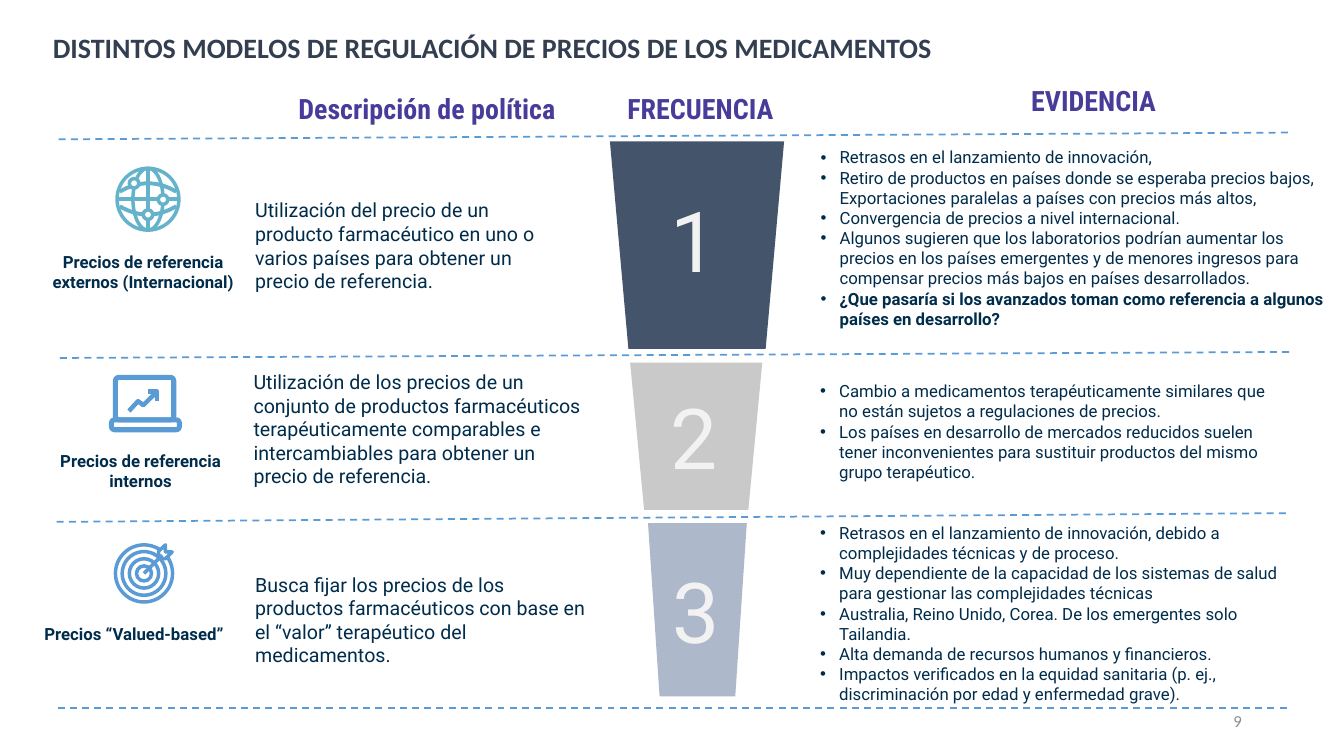
"""Build a slide comparing three models of medicine price regulation."""
from pptx import Presentation
from pptx.dml.color import RGBColor
from pptx.enum.dml import MSO_LINE
from pptx.enum.shapes import MSO_CONNECTOR as Link, MSO_SHAPE as Kind
from pptx.enum.text import MSO_ANCHOR as Anchor, MSO_AUTO_SIZE as Fit, PP_ALIGN as Align
from pptx.oxml.ns import qn
from pptx.util import Cm, Pt
from lxml.etree import SubElement

NAVY = RGBColor(0x00, 0x2C, 0x4B)
SLATE = RGBColor(0x33, 0x3F, 0x50)
PURPLE = RGBColor(0x48, 0x3C, 0x9A)
BLUE = RGBColor(0x5B, 0x9B, 0xD5)
TEAL = RGBColor(0x65, 0xB3, 0xCB)
DARK = RGBColor(0x44, 0x54, 0x6A)
SILVER = RGBColor(0xC9, 0xC9, 0xC9)
MIST = RGBColor(0xAD, 0xB9, 0xCA)
GREY = RGBColor(0x8C, 0x8C, 0x8C)
PALE = RGBColor(0xF2, 0xF2, 0xF2)
WHITE = RGBColor(0xFF, 0xFF, 0xFF)

deck = Presentation()
deck.slide_width, deck.slide_height = Cm(33.87), Cm(19.05)
slide = deck.slides.add_slide(deck.slide_layouts[5])
shapes = slide.shapes


def write(text, at, box=None, size=14, font="Roboto", color=NAVY, bold=False,
          align=Align.LEFT, anchor=Anchor.TOP, inset=0.25, bullet=False, strong=None):
    spot = [Cm(n) for n in at]
    if box is None:
        box = shapes.add_textbox(*spot)
    box.left, box.top, box.width, box.height = spot
    frame = box.text_frame
    frame.text = text
    frame.word_wrap, frame.auto_size = True, Fit.NONE
    frame.vertical_anchor = anchor
    frame.margin_left, frame.margin_right = Cm(inset), Cm(0.25)
    frame.margin_top = frame.margin_bottom = Cm(0.13)
    for index, para in enumerate(frame.paragraphs):
        para.alignment = align
        face = para.runs[0].font
        face.name, face.size = font, Pt(size)
        face.bold = bold or index == strong
        face.color.rgb = color
        if bullet:
            props = para._p.get_or_add_pPr()
            props.set("marL", str(Cm(0.48)))
            props.set("indent", str(-Cm(0.48)))
            SubElement(props, qn("a:buFont")).set("typeface", "Arial")
            SubElement(props, qn("a:buChar")).set("char", "•")


def paint(shape, fill=None, line=None, width=2.5):
    shape.shadow.inherit = False
    if fill is None:
        shape.fill.background()
    else:
        shape.fill.solid()
        shape.fill.fore_color.rgb = fill
    if line is None:
        shape.line.fill.background()
    else:
        shape.line.color.rgb = line
        shape.line.width = Pt(width)


write("DISTINTOS MODELOS DE REGULACIÓN DE PRECIOS DE LOS MEDICAMENTOS",
      (1.08, 0.64, 30.02, 1.12), box=shapes.title, size=20, font="Calibri",
      color=SLATE, bold=True)
write("9", (23.93, 17.65, 7.62, 1.02), size=12, font="Calibri", color=GREY,
      align=Align.RIGHT, anchor=Anchor.MIDDLE)

heads = [
    ("Descripción de política", 6.86, 2.18, Align.CENTER),
    ("FRECUENCIA", 15.56, 2.18, Align.LEFT),
    ("EVIDENCIA", 23.66, 1.98, Align.CENTER),
]
for text, x, y, align in heads:
    write(text, (x, y, 7.8, 1.12), size=20, font="Roboto Condensed",
          color=PURPLE, bold=True, align=align)

rules = [
    (1.48, 3.51, 32.49, 3.34),
    (1.51, 9.02, 32.5, 8.87),
    (1.43, 13.15, 32.44, 12.93),
    (1.45, 17.84, 32.46, 17.84),
]
for ends in rules:
    rule = shapes.add_connector(Link.STRAIGHT, *[Cm(n) for n in ends])
    rule.line.color.rgb = BLUE
    rule.line.width = Pt(1.25)
    rule.line.dash_style = MSO_LINE.DASH
    SubElement(rule._element.spPr, qn("a:effectLst"))

labels = [
    ("Precios de referencia externos (Internacional)", (0.98, 6.22, 5.26, 1.8)),
    ("Precios de referencia internos", (0.99, 11.23, 5.11, 1.27)),
    ("Precios “Valued-based”", (0.51, 15.6, 5.74, 0.76)),
]
for text, at in labels:
    write(text, at, size=12, bold=True, align=Align.CENTER)

policies = [
    ("Utilización del precio de un producto farmacéutico en uno o varios países "
     "para obtener un precio de referencia.", (6.18, 4.87, 8.1, 2.64)),
    ("Utilización de los precios de un conjunto de productos farmacéuticos "
     "terapéuticamente comparables e intercambiables para obtener un precio de "
     "referencia.", (6.14, 9.2, 8.86, 3.25)),
    ("Busca fijar los precios de los productos farmacéuticos con base en el "
     "“valor” terapéutico del medicamentos.", (6.18, 14.3, 8.92, 2.64)),
]
for text, at in policies:
    write(text, at)

steps = [
    (DARK, 0.106, (15.37, 3.56, 4.39, 5.23), (16.69, 4.2, 1.57, 3.63)),
    (SILVER, 0.106, (15.88, 9.14, 3.33, 3.71), (16.7, 9.7, 1.4, 2.59)),
    (MIST, 0.117, (16.33, 13.18, 2.49, 4.37), (16.76, 13.87, 1.12, 3.02)),
]
for rank, (color, slant, at, spot) in enumerate(steps, 1):
    step = shapes.add_shape(Kind.TRAPEZOID, *[Cm(n) for n in at])
    step.adjustments[0] = slant
    step.rotation = 180
    paint(step, color)
    plate = shapes.add_shape(Kind.RECTANGLE, *[Cm(n) for n in spot])
    paint(plate, color)
    write(str(rank), spot, box=plate, size=60, color=PALE, anchor=Anchor.MIDDLE,
          inset=0.2)

proofs = [
    ((20.43, 3.58, 13.61, 4.88), 4, [
        "Retrasos en el lanzamiento de innovación,",
        "Retiro de productos en países donde se esperaba precios bajos, "
        "Exportaciones paralelas a países con precios más altos,",
        "Convergencia de precios a nivel internacional.",
        "Algunos sugieren que los laboratorios podrían aumentar los precios en los "
        "países emergentes y de menores ingresos para compensar precios más bajos "
        "en países desarrollados.",
        "¿Que pasaría si los avanzados toman como referencia a algunos países en "
        "desarrollo?"]),
    ((20.42, 9.47, 12.09, 2.82), None, [
        "Cambio a medicamentos terapéuticamente similares que no están sujetos a "
        "regulaciones de precios.",
        "Los países en desarrollo de mercados reducidos suelen tener inconvenientes "
        "para sustituir productos del mismo grupo terapéutico."]),
    ((20.42, 13.04, 12.09, 4.88), None, [
        "Retrasos en el lanzamiento de innovación, debido a complejidades técnicas "
        "y de proceso.",
        "Muy dependiente de la capacidad de los sistemas de salud para gestionar "
        "las complejidades técnicas",
        "Australia, Reino Unido, Corea. De los emergentes solo Tailandia.",
        "Alta demanda de recursos humanos y financieros.",
        "Impactos verificados en la equidad sanitaria (p. ej., discriminación por "
        "edad y enfermedad grave)."]),
]
for at, strong, points in proofs:
    write("\n".join(points), at, size=12, bullet=True, strong=strong)

laptop = [((2.91, 9.51, 1.47, 1.07), 0.08), ((2.81, 10.58, 1.71, 0.25), 0.3)]
for at, curve in laptop:
    part = shapes.add_shape(Kind.ROUNDED_RECTANGLE, *[Cm(n) for n in at])
    part.adjustments[0] = curve
    paint(part, line=BLUE, width=3.6)

arcs = []
for edge, peak in [(4.83, 4.62), (5.2, 5.41)]:
    arcs.append([(3.73 + 0.71 * n / 8, peak + (edge - peak) * (n / 8) ** 2)
                 for n in range(-8, 9)])

globe = [(3.73, 5.02, 0.78, 0.78), (3.73, 5.02, 0.38, 0.78)]
target = [(3.63, 14.45, r, r) for r in (0.19, 0.37, 0.55, 0.72)]
nodes = [(x, y, 0.12, 0.12) for x, y in [(3.38, 4.62), (4.11, 5.03), (3.73, 5.41)]]
strokes = [(arc, TEAL, 2.8, False) for arc in arcs] + [
    ([(3.73, 4.24), (3.73, 5.8)], TEAL, 2.8, False),
    ([(2.95, 5.02), (4.51, 5.02)], TEAL, 2.8, False),
    ([(3.25, 10.36), (3.48, 10.11), (3.61, 10.21), (3.96, 9.87)], BLUE, 3.2, False),
    ([(3.73, 9.87), (3.96, 9.87), (3.96, 10.11)], BLUE, 3.2, False),
    ([(4, 13.89), (4.17, 13.73), (4.17, 13.91), (4.34, 13.91), (4.17, 14.08),
      (4, 14.08)], BLUE, 2.5, True),
    ([(3.63, 14.45), (4.09, 13.99)], BLUE, 2.5, False),
]
for x, y, rx, ry in globe + target:
    ring = shapes.add_shape(Kind.OVAL, Cm(x - rx), Cm(y - ry), Cm(2 * rx), Cm(2 * ry))
    paint(ring, line=TEAL if y < 9 else BLUE)
for points, color, width, closed in strokes:
    spots = [(Cm(x), Cm(y)) for x, y in points]
    path = shapes.build_freeform(*spots[0])
    path.add_line_segments(spots[1:], close=closed)
    paint(path.convert_to_shape(), WHITE if closed else None, color, width)
for x, y, rx, ry in nodes:
    node = shapes.add_shape(Kind.OVAL, Cm(x - rx), Cm(y - ry), Cm(2 * rx), Cm(2 * ry))
    paint(node, WHITE, TEAL)

deck.save("out.pptx")
